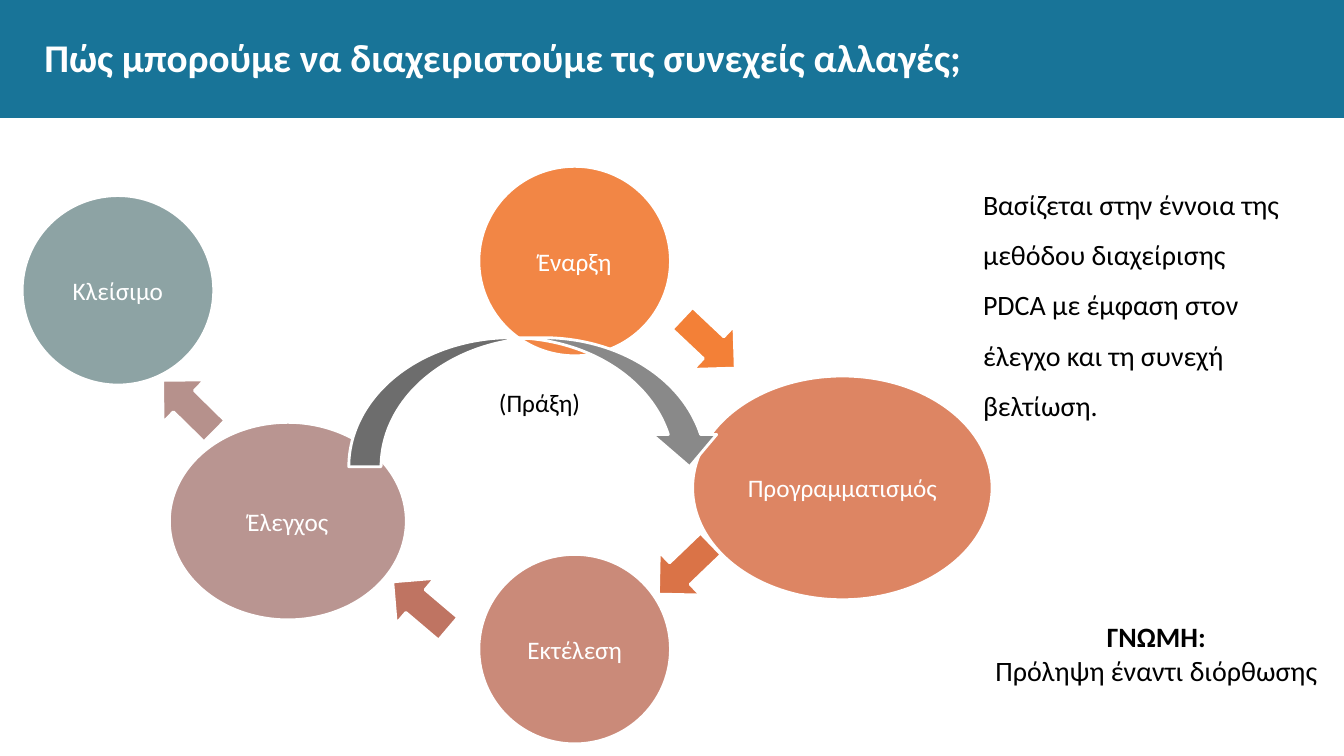
from pptx import Presentation
from pptx.dml.color import RGBColor
from pptx.enum.shapes import MSO_SHAPE
from pptx.enum.text import MSO_ANCHOR, MSO_AUTO_SIZE, PP_ALIGN
from pptx.util import Inches, Pt

OVAL, ARROW = MSO_SHAPE.OVAL, MSO_SHAPE.RIGHT_ARROW
CURVED, RECT = MSO_SHAPE.CURVED_LEFT_ARROW, MSO_SHAPE.RECTANGLE
MIDDLE, TOP = MSO_ANCHOR.MIDDLE, MSO_ANCHOR.TOP
LEFT, CENTER = PP_ALIGN.LEFT, PP_ALIGN.CENTER
C = {"banner": "187498", "white": "FFFFFF", "black": "000000", "act": "898989"}

prs = Presentation()
prs.slide_width, prs.slide_height = Inches(13.33), Inches(7.5)
s = prs.slides.add_slide(prs.slide_layouts[5])


def add_shape(kind, box, fill, line=True, rotation=0):
    sp = s.shapes.add_shape(kind, *map(Inches, box))
    sp.shadow.inherit = False
    sp.rotation = rotation
    sp.fill.solid()
    sp.fill.fore_color.rgb = RGBColor.from_string(fill)
    if line:
        sp.line.color.rgb = RGBColor.from_string(C["white"])
        sp.line.width = Pt(2)
    else:
        sp.line.fill.background()
    return sp


def set_text(sp, lines, size, color, align=LEFT, anchor=MIDDLE, inset=True, bold_first=False):
    tf = sp.text_frame
    tf.text = "\n".join(lines)
    tf.word_wrap = True
    tf.auto_size = MSO_AUTO_SIZE.NONE
    tf.vertical_anchor = anchor
    tf.margin_left = tf.margin_right = Inches(0.1 if inset else 0)
    tf.margin_top = tf.margin_bottom = Inches(0.05 if inset else 0)
    for i, p in enumerate(tf.paragraphs):
        p.alignment = align
        p.font.name, p.font.size = "Calibri", Pt(size)
        p.font.bold = bold_first and i == 0
        p.font.color.rgb = RGBColor.from_string(color)
    return tf


# Banner behind the title
title = s.shapes.title
banner = add_shape(RECT, (0, 0, 13.33, 1.17), C["banner"], line=False)
title._element.addprevious(banner._element)
title.left, title.top = Inches(0.44), Inches(0.19)
title.width, title.height = Inches(12.46), Inches(0.74)
set_text(title, ["Πώς μπορούμε να διαχειριστούμε τις συνεχείς αλλαγές;"], 28, C["white"],
         inset=False, bold_first=True)

# Explanation and motto on the right
body = s.shapes.add_textbox(Inches(9.75), Inches(1.38), Inches(2.94), Inches(3.12))
tf = set_text(body, ["Βασίζεται στην έννοια της μεθόδου διαχείρισης PDCA με έμφαση "
                     "στον έλεγχο και τη συνεχή βελτίωση."], 20, C["black"], inset=False)
tf.paragraphs[0].line_spacing = 1.5

motto = s.shapes.add_textbox(Inches(9.7), Inches(6.1), Inches(3.54), Inches(0.77))
set_text(motto, ["ΓΝΩΜΗ:", "Πρόληψη έναντι διόρθωσης"], 20, C["black"],
         align=CENTER, anchor=TOP, bold_first=True)

# Project phases
phases = [
    ("Έναρξη", (4.75, 1.65, 1.9, 1.88), "F28645"),
    ("Προγραμματισμός", (6.87, 3.73, 2.97, 2.22), "DD8563"),
    ("Εκτέλεση", (4.75, 5.5, 1.9, 1.88), "CA8A79"),
    ("Έλεγχος", (1.68, 4.19, 2.35, 1.96), "B99591"),
    ("Κλείσιμο", (0.22, 1.94, 1.9, 1.88), "8DA3A4"),
]
for name, box, fill in phases:
    set_text(add_shape(OVAL, box, fill), [name], 18, C["white"], align=CENTER)

# Arrows from each phase to the next
steps = [
    (6.67, 3.11, 43.3, "F38037"),
    (6.43, 5.35, 136.2, "DA7347"),
    (3.81, 5.71, 220.3, "BF7462"),
    (1.51, 3.73, 224.5, "B6918C"),
]
for x, y, angle, fill in steps:
    add_shape(ARROW, (x, y, 0.72, 0.59), fill, rotation=angle)

# Corrective action: from control back to planning
add_shape(CURVED, (4.67, 2.14, 1.28, 3.7), C["act"], rotation=270)
action = s.shapes.add_textbox(Inches(4.85), Inches(3.79), Inches(1.04), Inches(0.4))
set_text(action, ["(Πράξη)"], 18, C["black"], anchor=TOP)

prs.save("out.pptx")
